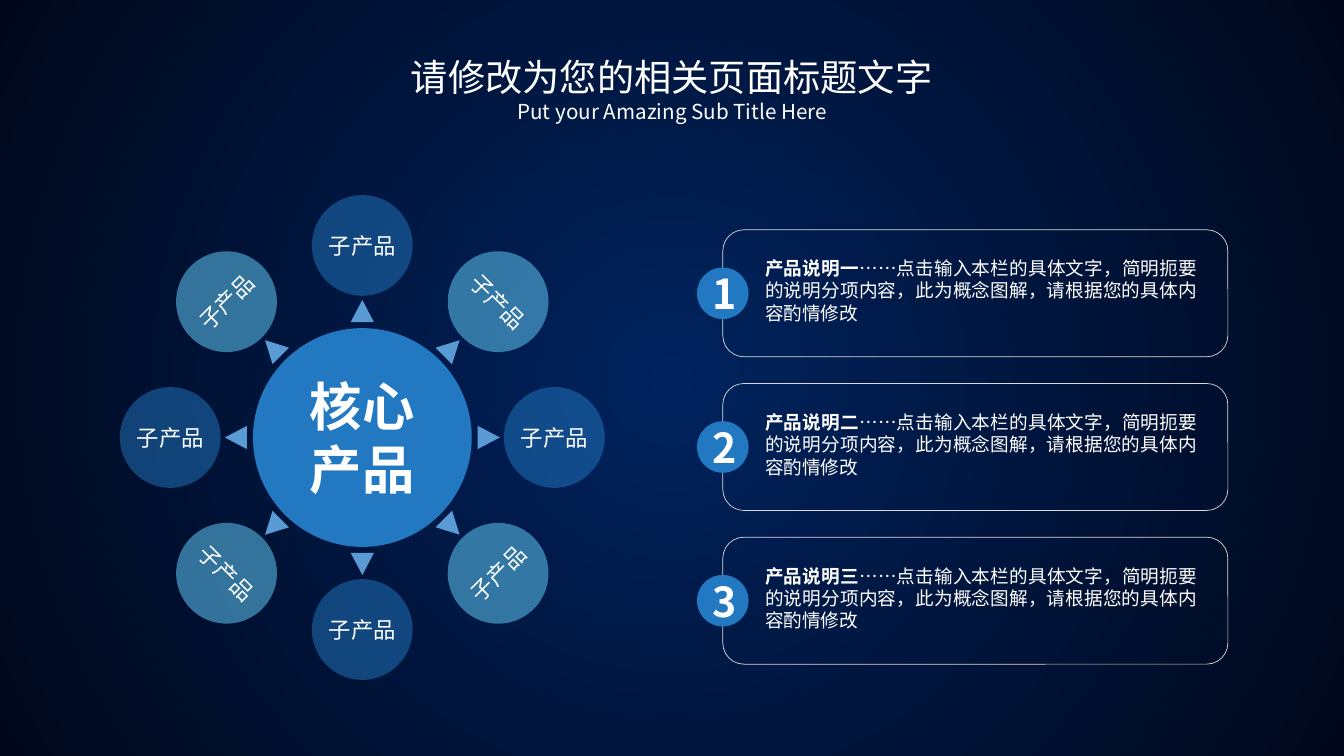
from math import cos, radians, sin

from pptx import Presentation
from pptx.dml.color import RGBColor
from pptx.enum.shapes import MSO_SHAPE as Shape
from pptx.enum.text import MSO_ANCHOR as Anchor, MSO_AUTO_SIZE as AutoSize, PP_ALIGN as Align
from pptx.oxml import parse_xml
from pptx.oxml.ns import nsdecls, qn
from pptx.util import Inches, Pt

FONT = "Noto Sans CJK SC"
COLORS = {
    "center": "00235E", "edge": "00071A", "white": "FFFFFF", "blue": "2378C2",
    "cyan": "55B5E2", "arrow": "5B9BD5", "outline": "D9D9D9",
}
WIDTH, HEIGHT = Inches(13.333), Inches(7.5)
DETAIL = "……点击输入本栏的具体文字，简明扼要的说明分项内容，此为概念图解，请根据您的具体内容酌情修改"


def across(share):
    """Length as a percentage of the slide width."""
    return round(WIDTH * share / 100)


def down(share):
    """Length as a percentage of the slide height."""
    return round(HEIGHT * share / 100)


def area(left, top, width, height):
    return across(left), down(top), across(width), down(height)


def centered(x, y, width, height):
    return round(x - width / 2), round(y - height / 2), width, height


def color(name):
    return RGBColor.from_string(COLORS[name])


def write(box, runs, size, align=Align.CENTER, anchor=Anchor.TOP, grow=True):
    """Fill a shape with one paragraph of (text, bold) runs."""
    frame = box.text_frame
    settings = {
        "margin_left": 0, "margin_top": 0, "margin_right": 0, "margin_bottom": 0,
        "word_wrap": True, "vertical_anchor": anchor,
        "auto_size": AutoSize.SHAPE_TO_FIT_TEXT if grow else AutoSize.NONE,
    }
    for name, value in settings.items():
        setattr(frame, name, value)
    para = frame.paragraphs[0]
    para.alignment, para.space_before = align, Pt(0)
    for text, bold in runs:
        span = para.add_run()
        span.text = text
        for name, value in {"name": FONT, "size": Pt(size), "bold": bold}.items():
            setattr(span.font, name, value)
        span.font.color.rgb = color("white")
        span.font.latin = None
        span.font.color.rgb = color("white")
        span._r.get_or_add_rPr().find(qn("a:latin")).addnext(
            parse_xml(f'<a:ea {nsdecls("a")} typeface="{FONT}"/>'))


def fill_heading(box, place, text, size):
    box.left, box.top, box.width, box.height = place
    write(box, [(text, False)], size)


def add_text(shapes, place, runs, size, align=Align.CENTER):
    write(shapes.add_textbox(*place), runs, size, align)


def add_figure(shapes, kind, place, fill=None, opacity=100, rotation=0):
    figure = shapes.add_shape(kind, *place)
    figure.shadow.inherit = False
    figure.rotation = rotation
    figure.line.fill.background()
    if fill is None:
        figure.fill.background()
        return figure
    figure.fill.solid()
    figure.fill.fore_color.rgb = color(fill)
    if opacity < 100:
        tint = figure.element.spPr.find(qn("a:solidFill"))[0]
        tint.append(parse_xml(f'<a:alpha {nsdecls("a")} val="{opacity * 1000}"/>'))
    return figure


def paint_background(page):
    fill = page.background.fill
    fill.gradient()
    for stop, name in zip(fill.gradient_stops, ("center", "edge")):
        stop.color.rgb = color(name)
    linear = next(page.element.iter(qn("a:lin")))
    linear.getparent().replace(linear, parse_xml(
        f'<a:path {nsdecls("a")} path="circle">'
        '<a:fillToRect l="50000" t="50000" r="50000" b="50000"/></a:path>'))


def add_wheel(shapes):
    hub_x, hub_y = across(26.96), down(57.87)

    def on_orbit(angle, radius, width, height):
        turn = radians(angle)
        return centered(hub_x + across(radius) * sin(turn), hub_y - across(radius) * cos(turn),
                        across(width), across(height))

    # Satellites: upright on the axes, tilted on the diagonals
    for angle in range(0, 360, 45):
        diagonal = angle % 90 == 45
        tilt = (45 if angle % 180 == 45 else 315) if diagonal else 0
        satellite = add_figure(shapes, Shape.OVAL, on_orbit(angle, 14.29, 7.5, 7.5),
                               "cyan" if diagonal else "blue", 60 if diagonal else 50, tilt)
        write(satellite, [("子产品", False)], 16, anchor=Anchor.MIDDLE, grow=False)

    # Arrows pointing outwards
    for angle in range(0, 360, 45):
        add_figure(shapes, Shape.ISOSCELES_TRIANGLE, on_orbit(angle, 9.41, 1.73, 1.65),
                   "arrow", rotation=angle)

    # Hub
    add_figure(shapes, Shape.OVAL, centered(hub_x, hub_y, across(16.28), across(16.28)), "blue")
    add_text(shapes, centered(hub_x, hub_y, across(9.68), down(16.8)), [("核心产品", True)], 37.4)


def add_panel(shapes, number, title, top):
    panel = add_figure(shapes, Shape.ROUNDED_RECTANGLE, area(53.78, top, 37.58, 16.8))
    panel.line.color.rgb = color("outline")
    panel.line.width = Pt(0.5)

    # Numbered badge on the panel's left edge
    badge = shapes.add_group_shape().shapes
    middle = across(53.78), down(top + 8.4)
    add_figure(badge, Shape.OVAL, centered(*middle, across(3.84), across(3.84)), "blue")
    add_text(badge, centered(*middle, across(1.58), down(6.53)), [(str(number), True)], 29.4)

    add_text(shapes, area(56.93, top + 3.6, 32.18, 8.93), [(title, True), (DETAIL, False)],
             13.3, Align.JUSTIFY)


def main():
    deck = Presentation()
    deck.slide_width, deck.slide_height = WIDTH, HEIGHT
    page = deck.slides.add_slide(deck.slide_layouts[0])
    paint_background(page)

    # Headings
    title, subtitle = page.placeholders
    fill_heading(title, area(20.49, 7.2, 59.02, 6), "请修改为您的相关页面标题文字", 26.6)
    fill_heading(subtitle, area(29.03, 13.07, 42, 3.33), "Put your Amazing Sub Title Here", 14.7)

    # Product wheel and explanations
    add_wheel(page.shapes)
    for index, name in enumerate(("产品说明一", "产品说明二", "产品说明三")):
        add_panel(page.shapes, index + 1, name, 30.4 + 20.33 * index)

    deck.save("out.pptx")


if __name__ == "__main__":
    main()
